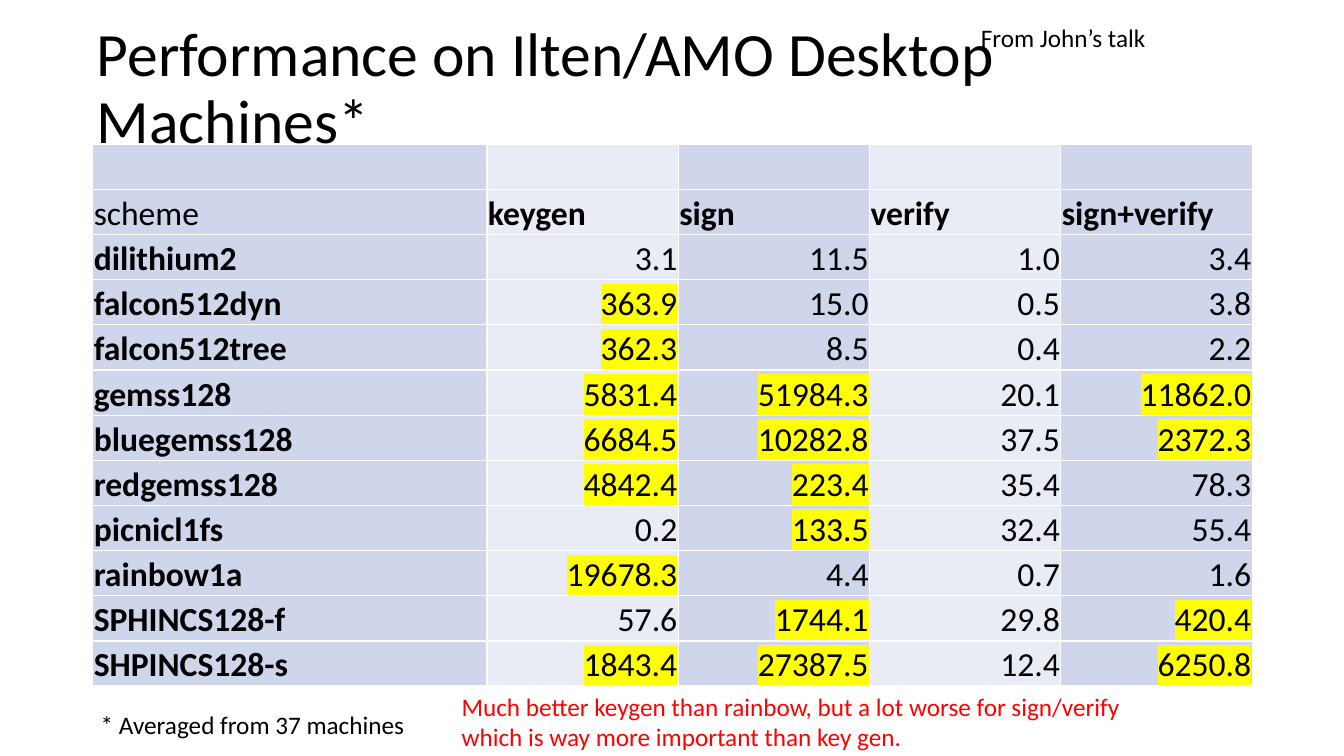
from pptx import Presentation
from pptx.dml.color import RGBColor
from pptx.enum import text
from pptx.oxml import parse_xml
from pptx.oxml.ns import nsdecls
from pptx.util import Inches, Pt

BLACK = RGBColor(0x00, 0x00, 0x00)
RED = RGBColor(0xFF, 0x00, 0x00)
WHITE = RGBColor(0xFF, 0xFF, 0xFF)
YELLOW = RGBColor(0xFF, 0xFF, 0x00)
BANDS = RGBColor(0xCF, 0xD5, 0xEA), RGBColor(0xE9, 0xEB, 0xF5)
FONT = "Calibri"
SLOW = 100  # values above this are highlighted

HEADERS = ["scheme", "keygen", "sign", "verify", "sign+verify"]
TIMINGS = [
    ["dilithium2", "3.1", "11.5", "1.0", "3.4"],
    ["falcon512dyn", "363.9", "15.0", "0.5", "3.8"],
    ["falcon512tree", "362.3", "8.5", "0.4", "2.2"],
    ["gemss128", "5831.4", "51984.3", "20.1", "11862.0"],
    ["bluegemss128", "6684.5", "10282.8", "37.5", "2372.3"],
    ["redgemss128", "4842.4", "223.4", "35.4", "78.3"],
    ["picnicl1fs", "0.2", "133.5", "32.4", "55.4"],
    ["rainbow1a", "19678.3", "4.4", "0.7", "1.6"],
    ["SPHINCS128-f", "57.6", "1744.1", "29.8", "420.4"],
    ["SHPINCS128-s", "1843.4", "27387.5", "12.4", "6250.8"],
]


def set_font(p, size, color=BLACK, bold=False):
    p.font.name, p.font.size, p.font.bold = FONT, Pt(size), bold
    p.font.color.rgb = color


def highlight(r):
    r._r.get_or_add_rPr().append(parse_xml(
        f'<a:highlight {nsdecls("a")}><a:srgbClr val="{YELLOW}"/></a:highlight>'))


def add_title(s, title, x, y, w, h):
    sp = s.shapes.title
    sp.left, sp.top, sp.width, sp.height = map(Inches, (x, y, w, h))
    tf = sp.text_frame
    tf.text = title
    tf.word_wrap = True
    tf.auto_size = text.MSO_AUTO_SIZE.NONE
    tf.vertical_anchor = text.MSO_ANCHOR.MIDDLE
    p = tf.paragraphs[0]
    p.alignment = text.PP_ALIGN.LEFT
    p.line_spacing = 0.9
    set_font(p, 44)


def add_note(s, note, x, y, w, h, color=BLACK, wrap=True):
    tf = s.shapes.add_textbox(*map(Inches, (x, y, w, h))).text_frame
    tf.text = note
    tf.word_wrap = wrap
    tf.auto_size = text.MSO_AUTO_SIZE.SHAPE_TO_FIT_TEXT
    set_font(tf.paragraphs[0], 18, color)


def style_cell(cell, band):
    """Fill the cell, draw its four borders and tighten its margins."""
    cell.fill.solid()
    cell.fill.fore_color.rgb = band
    cell.vertical_anchor = text.MSO_ANCHOR.BOTTOM
    cell.margin_left = cell.margin_right = cell.margin_top = Inches(0.01)
    cell.margin_bottom = 0
    for i, side in enumerate("LRTB"):
        cell._tc.get_or_add_tcPr().insert(i, parse_xml(
            f'<a:ln{side} {nsdecls("a")} w="{Pt(1)}"><a:solidFill>'
            f'<a:srgbClr val="{WHITE}"/></a:solidFill></a:ln{side}>'))


def fill_cell(cell, value, is_number, bold):
    p = cell.text_frame.paragraphs[0]
    set_font(p, 24, bold=bold)
    r = p.add_run()
    r.text = value
    if is_number:
        p.alignment = text.PP_ALIGN.RIGHT
        if float(value) > SLOW:
            highlight(r)


def add_timings(s, x, y, w, h):
    rows = [[""] * len(HEADERS), HEADERS] + TIMINGS
    table = s.shapes.add_table(len(rows), len(HEADERS),
                               *map(Inches, (x, y, w, h))).table
    table.first_row = table.horz_banding = False
    name_width = 0.34 * w
    value_width = (w - name_width) / (len(HEADERS) - 1)
    for j, column in enumerate(table.columns):
        column.width = Inches(value_width if j else name_width)
    for i, values in enumerate(rows):
        table.rows[i].height = Inches(h / len(rows))
        for j, value in enumerate(values):
            cell = table.cell(i, j)
            style_cell(cell, BANDS[j % 2])
            if value:
                is_number = i > 1 and j > 0
                fill_cell(cell, value, is_number,
                          bold=not is_number and value != "scheme")


def main():
    prs = Presentation()
    prs.slide_width, prs.slide_height = Inches(13.33), Inches(7.5)
    s = prs.slides.add_slide(prs.slide_layouts[5])
    add_title(s, "Performance on Ilten/AMO Desktop Machines*",
              0.86, 0.17, 11.78, 1.45)
    add_timings(s, 0.92, 1.43, 11.5, 5.38)
    add_note(s, "* Averaged from 37 machines", 0.9, 6.99, 3.25, 0.4, wrap=False)
    add_note(s, "From John’s talk", 9.63, 0.17, 2.02, 0.4)
    add_note(s, "Much better keygen than rainbow, but a lot worse for sign/verify "
             "which is way more important than key gen.",
             4.48, 6.81, 7.16, 0.71, color=RED)
    prs.save("out.pptx")


if __name__ == "__main__":
    main()
